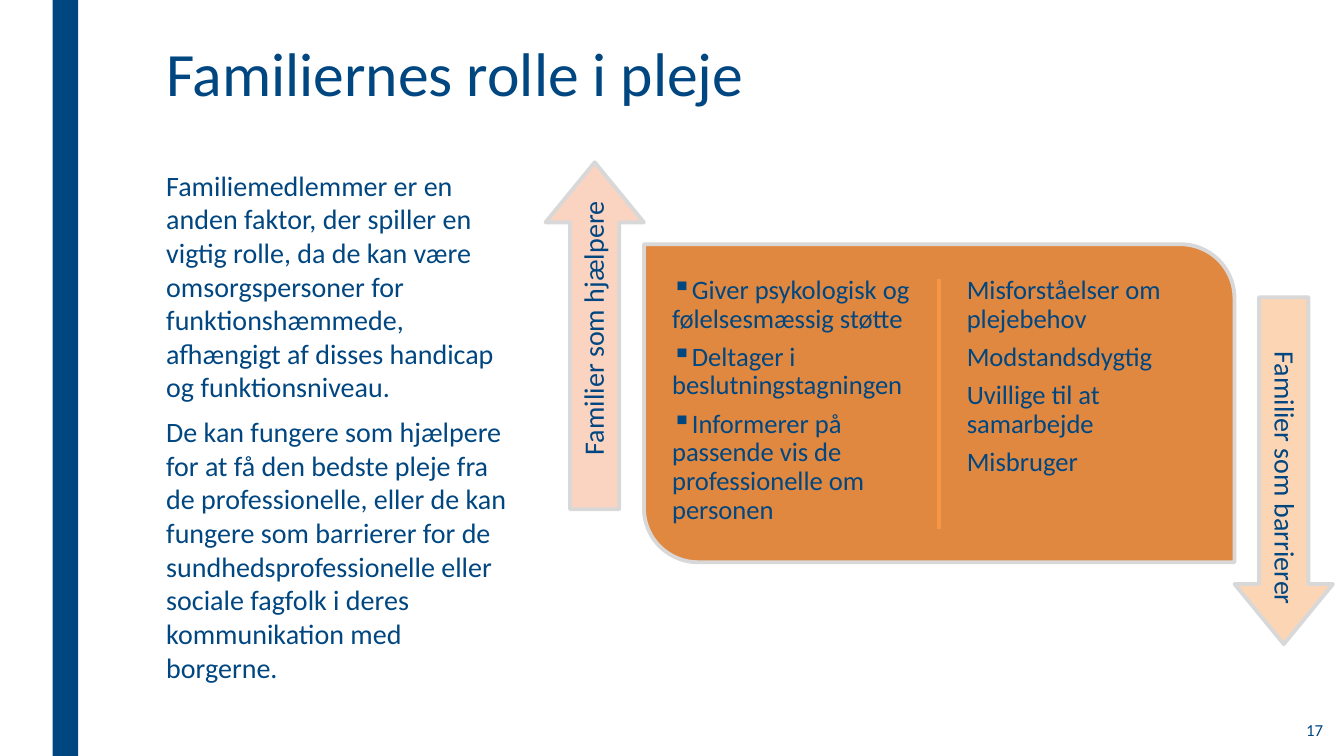
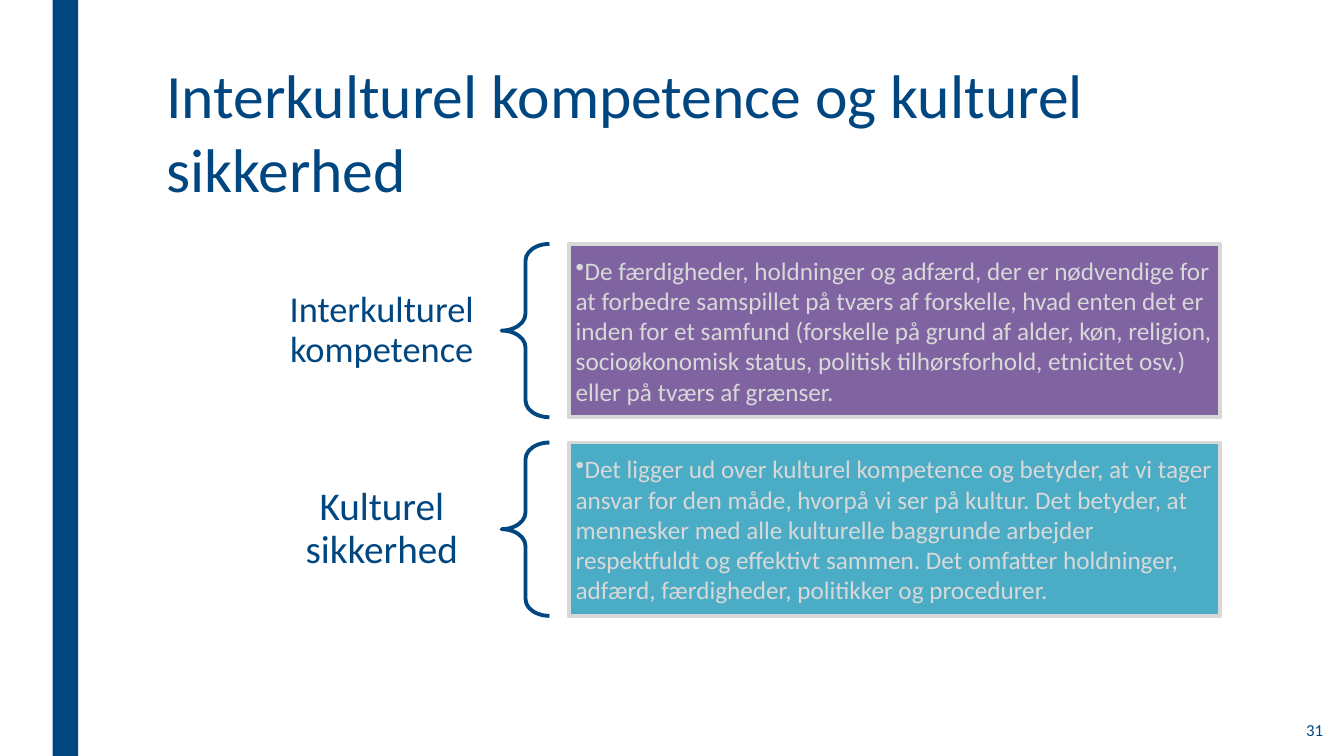
from dataclasses import dataclass

from lxml import etree
from pptx import Presentation
from pptx.dml.color import RGBColor
from pptx.enum.shapes import MSO_CONNECTOR, MSO_SHAPE
from pptx.enum.text import MSO_ANCHOR, PP_ALIGN
from pptx.oxml.ns import qn
from pptx.util import Inches, Pt

LEFT, CENTER, RIGHT = PP_ALIGN.LEFT, PP_ALIGN.CENTER, PP_ALIGN.RIGHT
TOP, MIDDLE = MSO_ANCHOR.TOP, MSO_ANCHOR.MIDDLE
RECT, BRACE, ARROW = MSO_SHAPE.RECTANGLE, MSO_SHAPE.LEFT_BRACE, MSO_SHAPE.RIGHT_ARROW
LEAF = MSO_SHAPE.ROUND_2_DIAG_RECTANGLE
STRAIGHT = MSO_CONNECTOR.STRAIGHT

FONT = "Calibri"
LINE_WIDTH = 2.75
COLORS = {
    "navy": "004680",
    "silver": "D8D8D8",
    "orange": "E08840",
    "divider": "F79646",
    "rose": "FBD3C1",
    "peach": "FCD5B5",
    "purple": "8064A2",
    "teal": "4BACC6",
}

FAMILY_TEXT = [
    "Familiemedlemmer er en anden faktor, der spiller en vigtig rolle, da de kan være "
    "omsorgspersoner for funktionshæmmede, afhængigt af disses handicap og funktionsniveau.",
    "De kan fungere som hjælpere for at få den bedste pleje fra de professionelle, eller de "
    "kan fungere som barrierer for de sundhedsprofessionelle eller sociale fagfolk i deres "
    "kommunikation med borgerne.",
]
HELPERS = [
    "Giver psykologisk og følelsesmæssig støtte",
    "Deltager i beslutningstagningen",
    "Informerer på passende vis de professionelle om personen",
]
BARRIERS = [
    "Misforståelser om plejebehov",
    "Modstandsdygtig",
    "Uvillige til at samarbejde",
    "Misbruger",
]
CONCEPTS = [
    ("Interkulturel kompetence", 26, "purple",
     "De færdigheder, holdninger og adfærd, der er nødvendige for at forbedre samspillet på "
     "tværs af forskelle, hvad enten det er inden for et samfund (forskelle på grund af alder, "
     "køn, religion, socioøkonomisk status, politisk tilhørsforhold, etnicitet osv.) eller på "
     "tværs af grænser."),
    ("Kulturel sikkerhed", 28, "teal",
     "Det ligger ud over kulturel kompetence og betyder, at vi tager ansvar for den måde, "
     "hvorpå vi ser på kultur. Det betyder, at mennesker med alle kulturelle baggrunde arbejder "
     "respektfuldt og effektivt sammen. Det omfatter holdninger, adfærd, færdigheder, politikker "
     "og procedurer."),
]


@dataclass
class Box:
    """A rectangle in inches."""
    left: float
    top: float
    width: float
    height: float

    def inner(self, left, top, width, height):
        """Return an inner box given as percentages of this one."""
        return Box(self.left + self.width * left / 100, self.top + self.height * top / 100,
                   self.width * width / 100, self.height * height / 100)

    def turned(self):
        """Return the box with its sides swapped about the same centre."""
        shift = (self.width - self.height) / 2
        return Box(self.left + shift, self.top - shift, self.height, self.width)

    def lengths(self):
        """Return left, top, width and height for python-pptx."""
        return [Inches(side) for side in (self.left, self.top, self.width, self.height)]


PAGE = Box(0, 0, 13.33, 7.5)


def color(name):
    """Return a named colour."""
    return RGBColor.from_string(COLORS[name])


def set_bullet(para, mark):
    """Give a paragraph a bullet without indent."""
    props = para._p.get_or_add_pPr()
    props.set("marL", "0")
    props.set("indent", "0")
    etree.SubElement(props, qn("a:buChar")).set("char", mark)


def write(shape, texts, size, ink="navy", align=LEFT, anchor=TOP, pad=(0.1, 0.05),
          spacing=None, before=0, after=0, bullet=None):
    """Fill a shape with evenly styled paragraphs."""
    frame = shape.text_frame
    frame.word_wrap = True
    frame.vertical_anchor = anchor
    frame.margin_left = frame.margin_right = Inches(pad[0])
    frame.margin_top = frame.margin_bottom = Inches(pad[1])
    frame.text = "\n".join(texts)
    for index, para in enumerate(frame.paragraphs):
        para.alignment = align
        para.line_spacing = spacing
        para.space_before = Pt(before if index else 0)
        para.space_after = Pt(after)
        if bullet:
            set_bullet(para, bullet)
        for span in para.runs:
            span.font.name = FONT
            span.font.size = Pt(size)
            span.font.color.rgb = color(ink)


def add_text(page, box, texts, size, turn=0, **style):
    """Add a text box, turned if asked."""
    shape = page.shapes.add_textbox(*(box.turned() if turn else box).lengths())
    shape.rotation = turn
    write(shape, texts, size, **style)


def add_figure(page, kind, box, fill=None, line=None, adjust=(), turn=0):
    """Add a preset shape, turned if asked."""
    shape = page.shapes.add_shape(kind, *(box.turned() if turn else box).lengths())
    shape.rotation = turn
    shape.shadow.inherit = False
    for index, value in enumerate(adjust):
        shape.adjustments[index] = value
    if fill:
        shape.fill.solid()
        shape.fill.fore_color.rgb = color(fill)
    else:
        shape.fill.background()
    if line:
        shape.line.color.rgb = color(line)
        shape.line.width = Pt(LINE_WIDTH)
    else:
        shape.line.fill.background()
    return shape


def add_divider(page, box):
    """Draw a vertical line along the left side of a box."""
    left, top, _, height = box.lengths()
    line = page.shapes.add_connector(STRAIGHT, left, top, left, top + height)
    line.line.color.rgb = color("divider")
    line.line.width = Pt(LINE_WIDTH)
    etree.SubElement(line._element.spPr, qn("a:effectLst"))


def add_page(deck, title, number, title_top, spacing=None):
    """Add a slide with band, title and page number."""
    page = deck.slides.add_slide(deck.slide_layouts[6])
    add_figure(page, RECT, PAGE.inner(3.92, 0, 1.9, 100), "navy")
    add_text(page, PAGE.inner(11.63, title_top, 78.77, 15), [title], 44, spacing=spacing)
    add_text(page, PAGE.inner(86.05, 93.6, 13.13, 5.87), [number], 12,
             align=RIGHT, anchor=MIDDLE)
    return page


def add_arrow(page, box, text, fill, turn, label_top):
    """Add an upright arrow with a label running along it."""
    add_figure(page, ARROW, box, fill, "silver", (0.5, 0.61), turn)
    add_text(page, box.inner(25, label_top, 50, 91), [text], 20, turn, align=RIGHT,
             anchor=MIDDLE, pad=(0.08, 0.08), spacing=0.9)


def add_balance(page, box):
    """Add the two-sided panel between its arrows."""
    panel = box.inner(12.5, 17, 75, 66)
    add_figure(page, LEAF, panel, "orange", "silver", (0, 0.17))
    add_divider(page, panel.inner(50, 10.8, 0, 78.7))
    for left, texts, bullet in ((3.4, HELPERS, "▪"), (53.3, BARRIERS, None)):
        add_text(page, panel.inner(left, 7.6, 43.3, 84.8), texts, 19, pad=(0.08, 0.08),
                 spacing=0.9, after=6.65, bullet=bullet)
    add_arrow(page, box.inner(0, 0, 12.5, 72), "Familier som hjælpere", "rose", 270, 9)
    add_arrow(page, box.inner(87.5, 28, 12.5, 72), "Familier som barrierer", "peach", 90, 0)


def add_concept(page, box, name, size, fill, text):
    """Add a term, a brace and its definition."""
    add_text(page, box.inner(0, 9, 25, 82), [name], size, align=CENTER, anchor=MIDDLE,
             pad=(0.2, 0.07), spacing=0.9)
    add_figure(page, BRACE, box.inner(25, 0, 5, 100), line="navy", adjust=(0.35, 0.5))
    panel = add_figure(page, RECT, box.inner(32, 0, 68, 100), fill, "silver")
    write(panel, [text], 18, "silver", anchor=MIDDLE, pad=(0.07, 0.07), bullet="•")


def add_concepts(page, box, gap=6.8):
    """Stack the concepts in equal rows."""
    height = (100 - gap * (len(CONCEPTS) - 1)) / len(CONCEPTS)
    for index, concept in enumerate(CONCEPTS):
        add_concept(page, box.inner(0, index * (height + gap), 100, height), *concept)


def main():
    """Build and save the deck."""
    deck = Presentation()
    deck.slide_width, deck.slide_height = Inches(PAGE.width), Inches(PAGE.height)

    page = add_page(deck, "Familiernes rolle i pleje", "17", 5.2, 0.89)
    add_text(page, PAGE.inner(11.63, 21.6, 27.16, 63.2), FAMILY_TEXT, 20, before=6, after=2)
    add_balance(page, PAGE.inner(40.59, 21.47, 58.59, 63.73))

    page = add_page(deck, "Interkulturel kompetence og kulturel sikkerhed", "31", 6.93)
    add_concepts(page, PAGE.inner(19.5, 32.27, 71.27, 49.2))

    deck.save("out.pptx")


if __name__ == "__main__":
    main()
